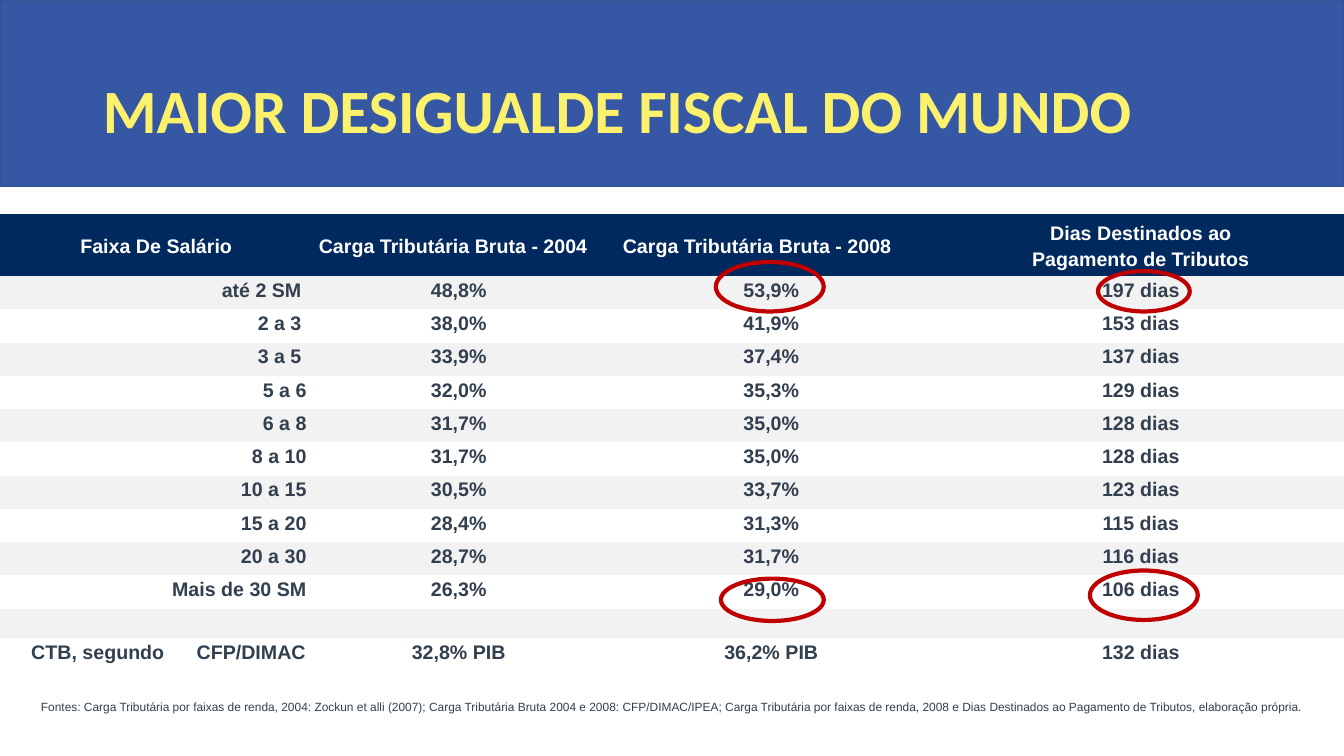
from dataclasses import dataclass

from lxml.etree import SubElement
from pptx import Presentation
from pptx.dml.color import RGBColor as Color
from pptx.enum.shapes import MSO_SHAPE as Shape
from pptx.enum.text import MSO_ANCHOR as Anchor, PP_ALIGN as Align
from pptx.oxml.ns import qn
from pptx.util import Inches, Pt

TITLE = "MAIOR DESIGUALDE FISCAL DO MUNDO"
HEADERS = [
    "Faixa De Salário",
    "Carga Tributária Bruta - 2004",
    "Carga Tributária Bruta - 2008",
    "Dias Destinados ao\nPagamento de Tributos",
]
BRACKETS = [
    ("até 2 SM", "48,8%", "53,9%", "197 dias"),
    ("2 a 3", "38,0%", "41,9%", "153 dias"),
    ("3 a 5", "33,9%", "37,4%", "137 dias"),
    ("5 a 6", "32,0%", "35,3%", "129 dias"),
    ("6 a 8", "31,7%", "35,0%", "128 dias"),
    ("8 a 10", "31,7%", "35,0%", "128 dias"),
    ("10 a 15", "30,5%", "33,7%", "123 dias"),
    ("15 a 20", "28,4%", "31,3%", "115 dias"),
    ("20 a 30", "28,7%", "31,7%", "116 dias"),
    ("Mais de 30 SM", "26,3%", "29,0%", "106 dias"),
]
TOTAL = ("CTB, segundo\tCFP/DIMAC", "32,8% PIB", "36,2% PIB", "132 dias")
SOURCES = (
    "Fontes: Carga Tributária por faixas de renda, 2004: Zockun et alli (2007); "
    "Carga Tributária Bruta 2004 e 2008: CFP/DIMAC/IPEA; "
    "Carga Tributária por faixas de renda, 2008 e Dias Destinados ao "
    "Pagamento de Tributos, elaboração própria."
)
HIGHLIGHTS = [
    (7.1, 2.6, 1.07, 0.49),
    (7.15, 5.74, 1.02, 0.42),
    (10.89, 2.69, 0.91, 0.4),
    (10.81, 5.66, 1.07, 0.49),
]

PAGE_WIDTH, PAGE_HEIGHT = 13.33, 7.5
BANNER_HEIGHT = 1.85
TABLE_TOP = 1.76
COLUMN_WIDTHS = [3.1, 2.9, 3.3, 4.03]
ROW_HEIGHTS = [0.36, 0.62] + [0.33] * len(BRACKETS) + [0.29, 0.66]
SIDE_MARGINS = (0.06, 0.06)
HEADER_MARGINS = [SIDE_MARGINS, (0, 0.11), (0.06, 0.34), SIDE_MARGINS]
TOTAL_MARGINS = (0.31, 0)
TOTAL_TAB = 1.64
FLUSH_MARGINS = (0.06, 0.11)
FLUSH_ROWS = 3
NO_STYLE = "{2D5ABB26-0587-4C30-8999-92F81FD0307C}"


@dataclass(frozen=True)
class Theme:
    banner: Color = Color.from_string("3657A3")
    banner_line: Color = Color.from_string("31538F")
    title: Color = Color.from_string("FCF16C")
    header: Color = Color.from_string("00295E")
    header_text: Color = Color.from_string("FFFFFF")
    band: Color = Color.from_string("F2F2F2")
    text: Color = Color.from_string("323F4F")
    highlight: Color = Color.from_string("C00000")
    title_font: str = "Calibri"
    body_font: str = "Arial"
    title_size: float = 44
    table_size: float = 14
    source_size: float = 8.5


theme = Theme()


def style_paragraph(para, font, size, color, align, bold=True, spacing=None):
    para.font.name = font
    para.font.size = Pt(size)
    para.font.color.rgb = color
    para.font.bold = bold
    para.alignment = align
    para.line_spacing = spacing


def add_outline(page, kind, place, line_color, line_width, fill=None):
    shape = page.shapes.add_shape(kind, *map(Inches, place))
    shape.shadow.inherit = False
    if fill is None:
        shape.fill.background()
    else:
        shape.fill.solid()
        shape.fill.fore_color.rgb = fill
    shape.line.color.rgb = line_color
    shape.line.width = Pt(line_width)


def fill_cell(cell, text, color, align, margins=SIDE_MARGINS, fill=None):
    cell.text = text
    cell.margin_left, cell.margin_right = map(Inches, margins)
    cell.margin_top = cell.margin_bottom = 0
    for para in cell.text_frame.paragraphs:
        style_paragraph(para, theme.body_font, theme.table_size, color, align, spacing=1.15)
    if fill is None:
        cell.fill.background()
    else:
        cell.fill.solid()
        cell.fill.fore_color.rgb = fill


def add_tax_table(page):
    frame = page.shapes.add_table(
        len(ROW_HEIGHTS), len(COLUMN_WIDTHS), 0, Inches(TABLE_TOP),
        Inches(sum(COLUMN_WIDTHS)), Inches(sum(ROW_HEIGHTS)))
    table = frame.table
    table.first_row = table.horz_banding = False
    frame._element.find(".//" + qn("a:tableStyleId")).text = NO_STYLE
    for column, width in zip(table.columns, COLUMN_WIDTHS):
        column.width = Inches(width)
    for row, height in zip(table.rows, ROW_HEIGHTS):
        row.height = Inches(height)

    for col in range(len(COLUMN_WIDTHS)):
        fill_cell(table.cell(0, col), "", theme.text, Align.CENTER)
    table.cell(0, 0).merge(table.cell(0, len(COLUMN_WIDTHS) - 1))

    for col, (header, margins) in enumerate(zip(HEADERS, HEADER_MARGINS)):
        cell = table.cell(1, col)
        fill_cell(cell, header, theme.header_text, Align.CENTER, margins, theme.header)
        cell.vertical_anchor = Anchor.MIDDLE

    body = BRACKETS + [("",) * len(HEADERS), TOTAL]
    for index, values in enumerate(body):
        band = theme.band if index % 2 == 0 else None
        for col, value in enumerate(values):
            align = Align.CENTER if col else Align.RIGHT
            flush = col == 0 and index < FLUSH_ROWS
            margins = FLUSH_MARGINS if flush else SIDE_MARGINS
            fill_cell(table.cell(index + 2, col), value, theme.text, align, margins, band)

    total = table.cell(len(ROW_HEIGHTS) - 1, 0)
    fill_cell(total, TOTAL[0], theme.text, Align.LEFT, TOTAL_MARGINS)
    properties = total.text_frame.paragraphs[0]._p.get_or_add_pPr()
    stops = SubElement(properties, qn("a:tabLst"))
    SubElement(stops, qn("a:tab"), pos=str(Inches(TOTAL_TAB)), algn="l")
    properties.insert(properties.index(properties.find(qn("a:defRPr"))), stops)


def add_sources(page):
    box = page.shapes.add_textbox(0, Inches(6.89), Inches(PAGE_WIDTH), Inches(0.24))
    box.text_frame.word_wrap = True
    box.text_frame.vertical_anchor = Anchor.MIDDLE
    para = box.text_frame.paragraphs[0]
    para.text = SOURCES
    style_paragraph(para, theme.body_font, theme.source_size, theme.text, Align.CENTER, bold=False)


def place_title(page):
    title = page.shapes.title
    title.left, title.top, title.width, title.height = map(Inches, (0.92, 0.4, 11.5, 1.45))
    title.text_frame.text = TITLE
    title.text_frame.vertical_anchor = Anchor.MIDDLE
    style_paragraph(title.text_frame.paragraphs[0], theme.title_font, theme.title_size,
                    theme.title, Align.LEFT, spacing=0.9)
    page.shapes._spTree.append(title._element)


def main():
    deck = Presentation()
    deck.slide_width, deck.slide_height = Inches(PAGE_WIDTH), Inches(PAGE_HEIGHT)
    page = deck.slides.add_slide(deck.slide_layouts[5])
    add_outline(page, Shape.RECTANGLE, (0, 0, PAGE_WIDTH, BANNER_HEIGHT),
                theme.banner_line, 1, theme.banner)
    add_tax_table(page)
    add_sources(page)
    for place in HIGHLIGHTS:
        add_outline(page, Shape.OVAL, place, theme.highlight, 3)
    place_title(page)
    deck.save("out.pptx")


if __name__ == "__main__":
    main()
